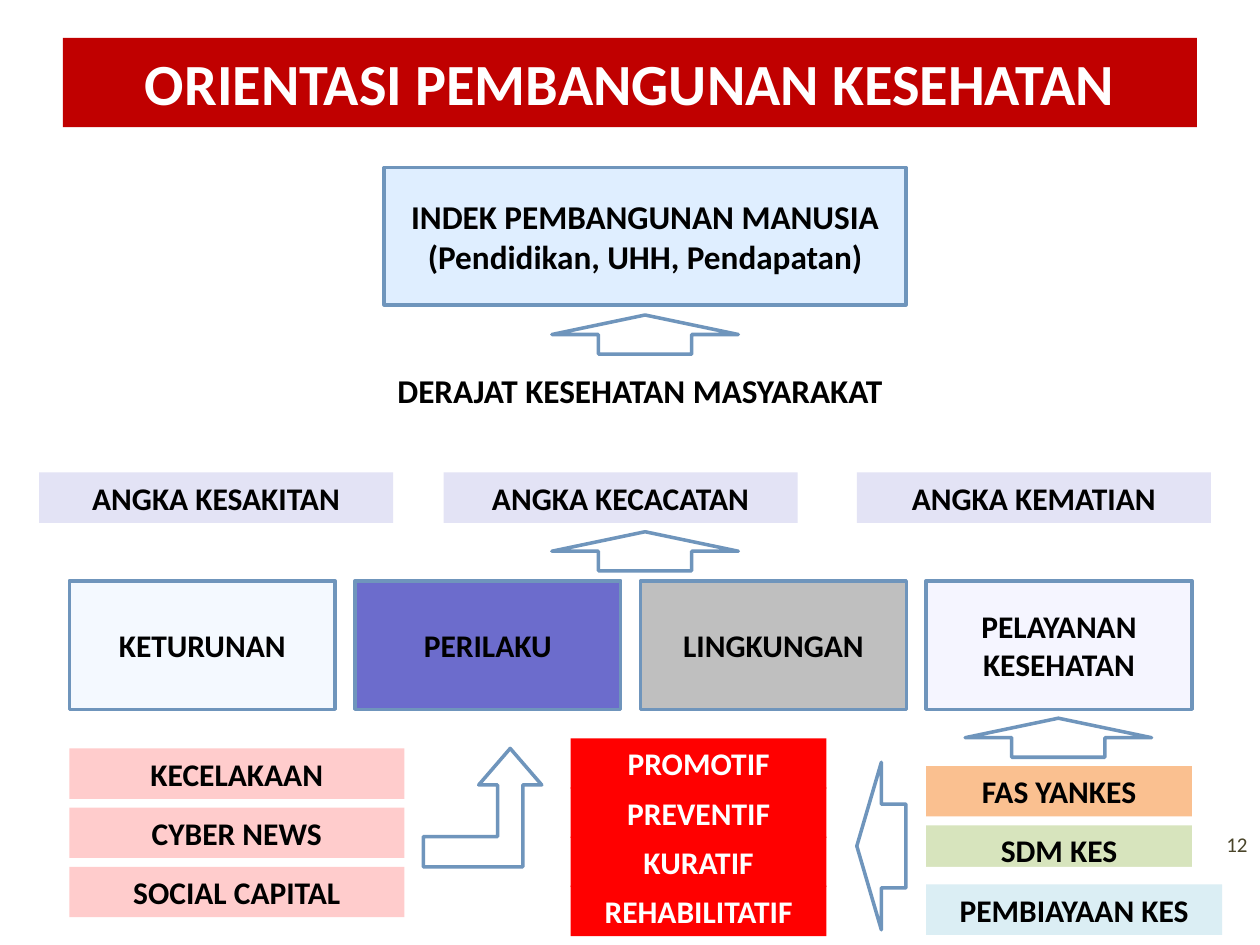
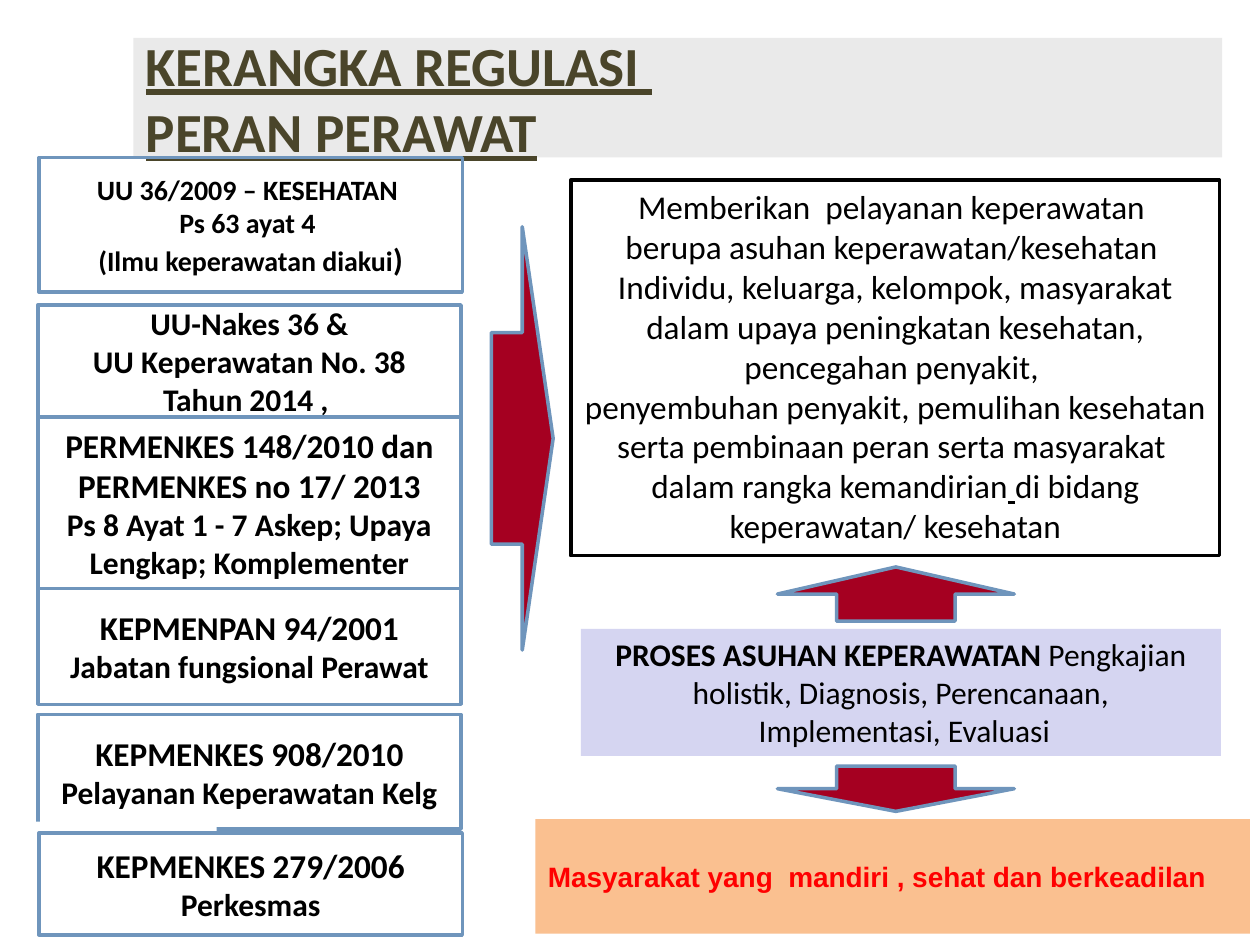
"""Build two slides on health development and the regulation of nursing."""
from pptx import Presentation
from pptx.dml.color import RGBColor
from pptx.enum.shapes import MSO_SHAPE
from pptx.enum.text import MSO_ANCHOR, PP_ALIGN
from pptx.util import Inches, Pt

BLUE, RED, CRIMSON = "6F95BC", "FF0000", "A50021"
WHITE, BLACK, BROWN, ORANGE = "FFFFFF", "000000", "4A452A", "FAC090"
TITLE_TOP = 0.3
RECT, UP, DOWN = MSO_SHAPE.RECTANGLE, MSO_SHAPE.UP_ARROW, MSO_SHAPE.DOWN_ARROW


def style(sp, fill=None, line=None):
    """Give a shape a flat fill and a two-point outline, or none."""
    sp.shadow.inherit = False
    for part, colour in ((sp.fill, fill), (sp.line.fill, line)):
        if colour:
            part.solid()
            part.fore_color.rgb = RGBColor.from_string(colour)
        else:
            part.background()
    if line:
        sp.line.width = Pt(2)


def add(s, at, fill=None, line=None, paras=(), kind=RECT, color=BLACK,
        align=PP_ALIGN.CENTER, anchor=MSO_ANCHOR.MIDDLE, **fmt):
    """Add a shape; each paragraph is a list of (text, format) runs."""
    sp = s.shapes.add_shape(kind, *map(Inches, at))
    style(sp, fill, line)
    tf = sp.text_frame
    tf.word_wrap = True
    tf.vertical_anchor = anchor
    for i, runs in enumerate(paras):
        p = tf.add_paragraph() if i else tf.paragraphs[0]
        p.alignment = align
        for text, own in [(runs, {})] if isinstance(runs, str) else runs:
            r = p.add_run()
            r.text = text
            values = {"name": "Calibri", "size": 18, "bold": True, **fmt, **own}
            values["size"] = Pt(values["size"])
            for key, value in values.items():
                setattr(r.font, key, value)
            r.font.color.rgb = RGBColor.from_string(color)


prs = Presentation()
prs.slide_width, prs.slide_height = Inches(10), Inches(7.5)
blank = prs.slide_layouts[6]

s = prs.slides.add_slide(blank)
add(s, (0.5, TITLE_TOP, 9, 0.71), "C00000", None,
    ["ORIENTASI PEMBANGUNAN KESEHATAN"], color=WHITE, size=33.3)
add(s, (3.05, 1.33, 4.14, 1.09), "DFEEFF", BLUE,
    ["INDEK PEMBANGUNAN MANUSIA", "(Pendidikan, UHH, Pendapatan)"], size=19)
add(s, (3.05, 2.89, 4.06, 0.42), WHITE, None,
    ["DERAJAT KESEHATAN MASYARAKAT"], anchor=MSO_ANCHOR.TOP, size=19)

for x, y in ((4.38, 2.5), (4.38, 4.22), (7.66, 5.7)):
    add(s, (x, y, 1.48, 0.31), WHITE, BLUE, kind=UP)

for x, text in ((0.31, "KESAKITAN"), (3.52, "KECACATAN"), (6.8, "KEMATIAN")):
    add(s, (x, 3.75, 2.81, 0.4), "E3E3F5", None, ["ANGKA " + text],
        anchor=MSO_ANCHOR.TOP)

factors = (("KETURUNAN", "F4F9FF"), ("PERILAKU", "6C6CCC"),
           ("LINGKUNGAN", "BFBFBF"), ("PELAYANAN KESEHATAN", "F5F5FF"))
for i, (text, fill) in enumerate(factors):
    add(s, (0.55 + 6.8 * i / 3, 4.61, 2.11, 1.02), fill, BLUE, [text])

add(s, (7.35, 6.55, 2.11, 0.4), "D7E4BD", None, ["SDM KES"],
    anchor=MSO_ANCHOR.TOP)
add(s, (0.02, 6.88, 9.98, 0.62), WHITE)
add(s, (7.35, 6.08, 2.11, 0.4), ORANGE, None, ["FAS YANKES"],
    anchor=MSO_ANCHOR.TOP)
add(s, (7.35, 7.02, 2.35, 0.4), "DBEEF4", None, ["PEMBIAYAAN KES"],
    anchor=MSO_ANCHOR.TOP)
for i, text in enumerate(("KECELAKAAN", "CYBER NEWS", "SOCIAL CAPITAL")):
    add(s, (0.55, 5.94 + 0.47 * i, 2.66, 0.4), "FFCCCC", None, [text],
        anchor=MSO_ANCHOR.TOP)
for i, text in enumerate(("PROMOTIF", "PREVENTIF", "KURATIF", "REHABILITATIF")):
    add(s, (4.53, 5.86 + 0.39 * i, 2.03, 0.4), RED, None, [text],
        color=WHITE, anchor=MSO_ANCHOR.TOP)

add(s, (6.8, 6.05, 0.39, 1.33), WHITE, BLUE, kind=MSO_SHAPE.LEFT_ARROW)
bend = s.shapes.build_freeform(336, 664, scale=Inches(0.01))
bend.add_line_segments([(395, 664), (395, 623), (380, 623), (405, 594),
                        (430, 623), (415, 623), (415, 688), (336, 688)])
style(bend.convert_to_shape(), WHITE, BLUE)
add(s, (7.67, 6.5, 2.33, 0.4), None, None, ["12"], color=BROWN,
    align=PP_ALIGN.RIGHT, size=12, bold=False)

s = prs.slides.add_slide(blank)
add(s, (1.06, TITLE_TOP, 8.64, 0.95), "EAEAEA", None,
    ["KERANGKA REGULASI ", "PERAN PERAWAT"], color=BROWN,
    align=PP_ALIGN.LEFT, size=31.5, underline=True)

big = {"size": 19}
rules = (
    (0.3, 2.42, 0.89, ["UU-Nakes 36 &", "UU Keperawatan No. 38 Tahun 2014 , "]),
    (0.3, 3.31, 1.36, [[("PERMENKES 148/2010 dan PERMENKES no 17/ 2013", big)],
                       "Ps 8 Ayat 1 - 7 Askep; Upaya Lengkap; Komplementer"]),
    (0.3, 4.67, 0.92, [[("KEPMENPAN 94/2001", big)],
                       "Jabatan fungsional Perawat"]),
    (0.3, 5.67, 0.91, [[("KEPMENKES 908/2010", big)],
                       "Pelayanan Keperawatan Kelg"]),
    (0.31, 6.61, 0.81, [[("KEPMENKES 279/2006", big)], "Perkesmas"]),
)
add(s, (0.31, 1.25, 3.36, 1.07), None, BLUE,
    ["UU 36/2009 – KESEHATAN ", "Ps 63 ayat 4 ",
     [("(Ilmu keperawatan diakui", {}), (")", {"size": 18})]], size=16)
for x, y, h, paras in rules:
    if paras is rules[-1][-1]:
        add(s, (0.01, 6.52, 1.71, 0.98), WHITE)
    add(s, (x, y, 3.36, h), None, BLUE, paras)

add(s, (3.9, 1.8, 0.49, 3.36), CRIMSON, BLUE, kind=MSO_SHAPE.RIGHT_ARROW)
add(s, (4.53, 1.43, 5.15, 2.98), WHITE, BLACK,
    ["Memberikan  pelayanan keperawatan ",
     "berupa asuhan keperawatan/kesehatan ",
     "Individu, keluarga, kelompok, masyarakat dalam upaya peningkatan "
     "kesehatan, pencegahan penyakit, ",
     [("penyembuhan penyakit, pemulihan kesehatan serta pembinaan peran "
       "serta masyarakat  dalam rangka kemandirian", {}),
      (" ", {"underline": True}), ("di bidang keperawatan/ kesehatan", {})]],
    anchor=MSO_ANCHOR.TOP, size=19, bold=False)
add(s, (6.17, 4.5, 1.88, 0.43), CRIMSON, BLUE, kind=UP)
add(s, (4.61, 4.99, 5.08, 1.01), "D5D5F1", None,
    [[("PROSES ASUHAN KEPERAWATAN ", {"bold": True}),
      ("Pengkajian holistik, Diagnosis, Perencanaan,", {})],
     " Implementasi, Evaluasi"], anchor=MSO_ANCHOR.TOP, bold=False)
add(s, (6.17, 6.08, 1.88, 0.36), CRIMSON, BLUE, kind=DOWN)
add(s, (4.25, 6.5, 5.67, 0.91), ORANGE, None,
    ["Masyarakat yang  mandiri , sehat dan berkeadilan"], color=RED,
    align=PP_ALIGN.LEFT, name="Arial", size=16)

prs.save("out.pptx")
